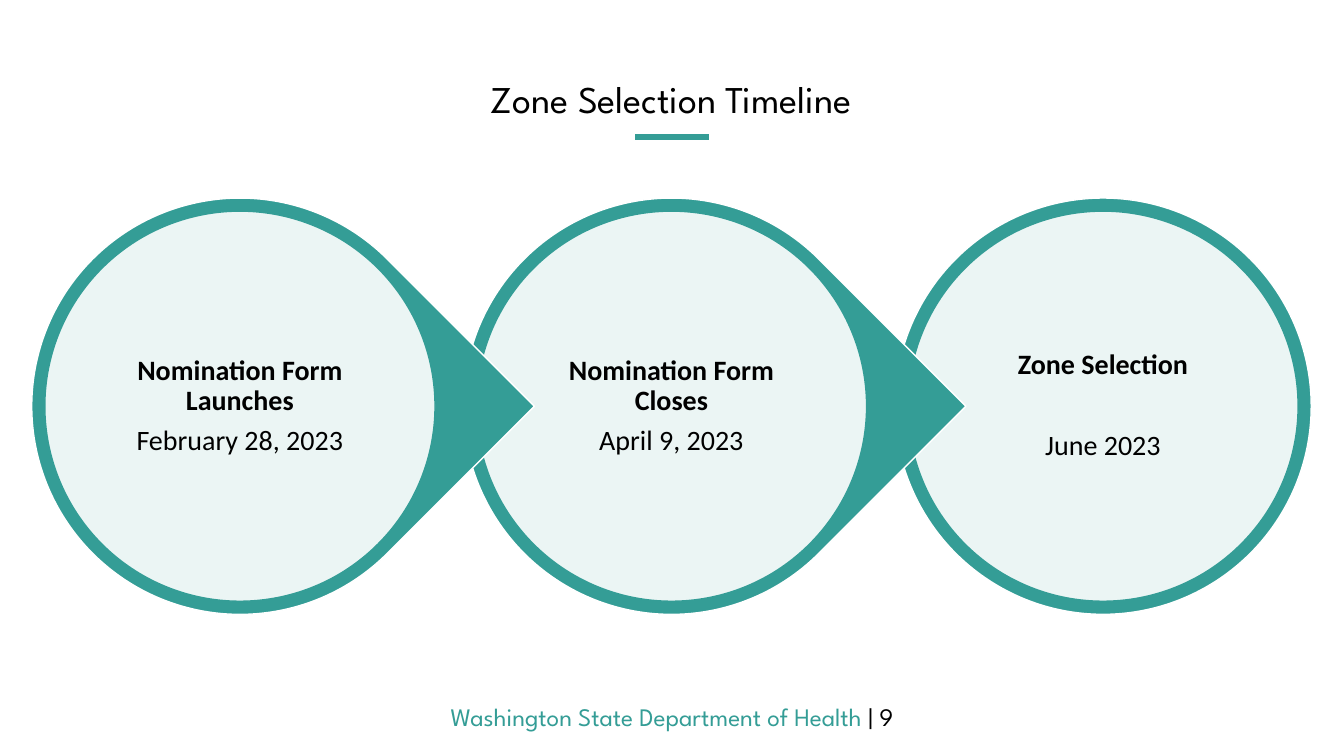
from lxml import etree
from pptx import Presentation
from pptx.dml.color import RGBColor
from pptx.enum.shapes import MSO_CONNECTOR as Connector, MSO_SHAPE as Shape
from pptx.enum.text import MSO_ANCHOR as Anchor, PP_ALIGN as Align
from pptx.oxml.ns import qn
from pptx.util import Inches, Pt

TEAL, WHITE, BLACK = "349D96", "FFFFFF", "000000"
HEADING_FONT, BODY_FONT = "League Spartan", "Calibri"


def color(value):
    return RGBColor.from_string(value)


class TimelineSlide:
    """Draws styled elements on one slide."""

    def __init__(self, presentation):
        self.slide = presentation.slides.add_slide(presentation.slide_layouts[6])

    def rule(self, left, right, top):
        line = self.slide.shapes.add_connector(
            Connector.STRAIGHT, Inches(left), Inches(top), Inches(right), Inches(top))
        line.line.color.rgb = color(TEAL)
        line.line.width = Pt(4)
        etree.SubElement(line._element.spPr, qn("a:effectLst"))

    def disc(self, kind, center, diameter, fill, outline, alpha=None, rotation=0):
        x, y = center
        shape = self.slide.shapes.add_shape(
            kind, Inches(x - diameter / 2), Inches(y - diameter / 2),
            Inches(diameter), Inches(diameter))
        shape.shadow.inherit = False
        shape.rotation = rotation
        shape.fill.solid()
        shape.fill.fore_color.rgb = color(fill)
        shape.line.color.rgb = color(outline)
        shape.line.width = Pt(1)
        if alpha is not None:
            solid = shape._element.spPr.find(qn("a:solidFill"))
            etree.SubElement(solid[0], qn("a:alpha"), val=str(alpha * 1000))

    def text(self, box, paragraphs, size, font, anchor=Anchor.MIDDLE,
             margin=None, line_spacing=0.9):
        shape = self.slide.shapes.add_textbox(*(Inches(length) for length in box))
        frame = shape.text_frame
        frame.word_wrap = True
        frame.vertical_anchor = anchor
        if margin is not None:
            frame.margin_left = frame.margin_right = Inches(margin)
            frame.margin_top = frame.margin_bottom = Inches(margin)
        for index, (runs, space_after) in enumerate(paragraphs):
            paragraph = frame.add_paragraph() if index else frame.paragraphs[0]
            paragraph.alignment = Align.CENTER
            paragraph.line_spacing = line_spacing
            paragraph.space_after = Pt(space_after)
            for words, run_color, bold in runs:
                run = paragraph.add_run()
                run.text = words
                run.font.size = Pt(size)
                run.font.name = font
                run.font.bold = bold
                run.font.color.rgb = color(run_color)

    def milestone(self, center, heading, date, gap, pointed):
        x, y = center
        kind, rotation = (Shape.TEAR, 45) if pointed else (Shape.OVAL, 0)
        self.disc(kind, center, 4.13, TEAL, WHITE, rotation=rotation)
        self.disc(Shape.OVAL, center, 3.87, WHITE, TEAL, alpha=90)
        side = 2.76
        self.text((x - side / 2, y - side / 2, side, side),
                  [([(heading, BLACK, True)], gap), ([(date, BLACK, False)], 7)],
                  20, BODY_FONT, margin=0.03)


def main():
    presentation = Presentation()
    presentation.slide_width = Inches(13.33)
    presentation.slide_height = Inches(7.5)
    timeline = TimelineSlide(presentation)

    timeline.rule(6.3, 7.03, 1.36)
    timeline.text((0, 6.91, 13.33, 0.4),
                  [([("Washington State Department of Health ", TEAL, False),
                     ("| 9", BLACK, False)], 0)],
                  18, HEADING_FONT, anchor=Anchor.TOP, line_spacing=1.0)
    timeline.text((-0.01, 0.74, 13.33, 0.53),
                  [([("Zone Selection Timeline", BLACK, False)], 0)],
                  27, HEADING_FONT)

    milestones = [
        ("Nomination Form Launches", "February 28, 2023", 7),
        ("Nomination Form Closes", "April 9, 2023", 7),
        ("Zone Selection", "June 2023", 36),
    ]
    last = len(milestones) - 1
    for index in range(last, -1, -1):
        heading, date, gap = milestones[index]
        timeline.milestone((2.38 + 4.28 * index, 4.03), heading, date, gap,
                           pointed=index < last)

    presentation.save("out.pptx")


if __name__ == "__main__":
    main()
